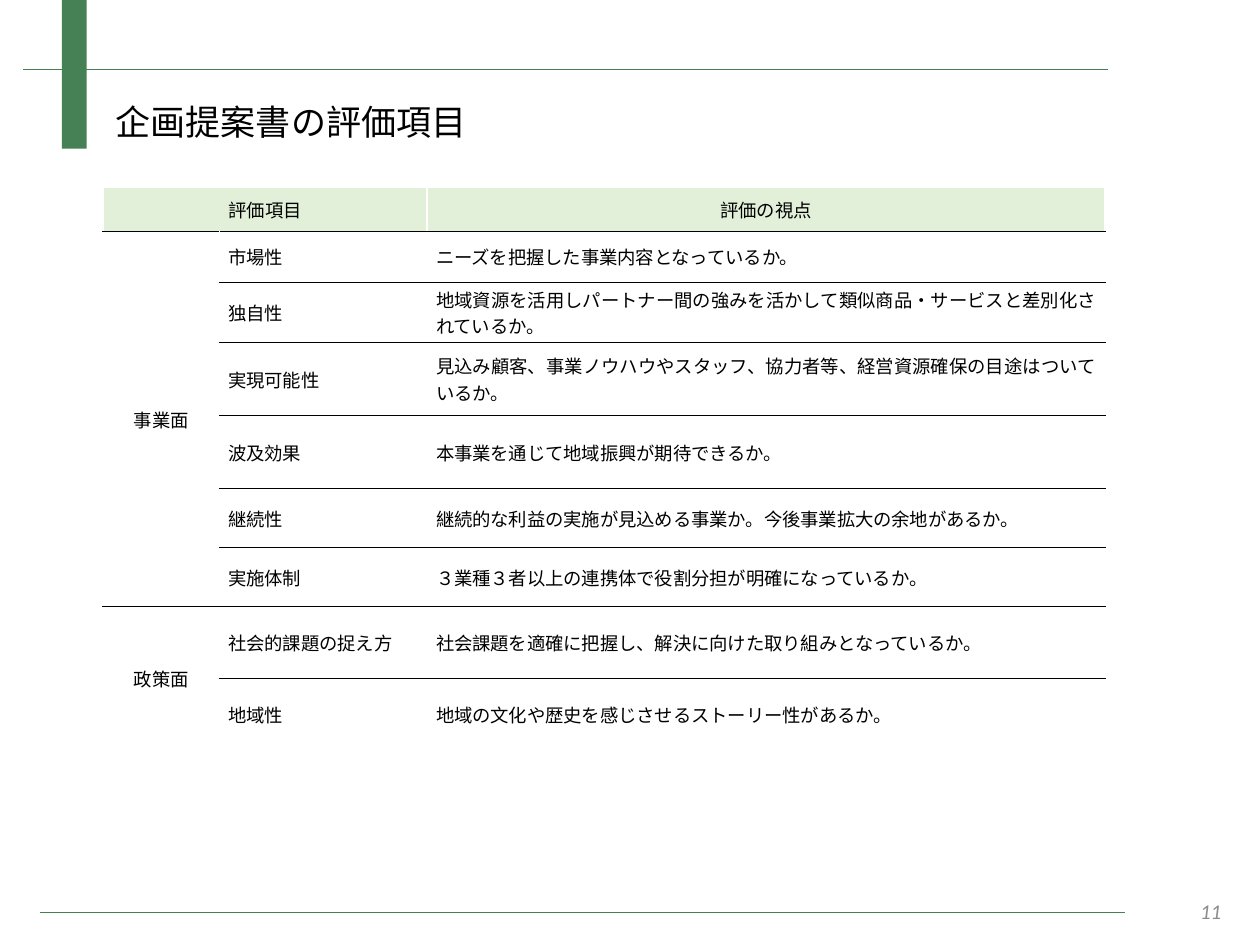
from lxml.etree import SubElement
from pptx import Presentation
from pptx.dml.color import RGBColor
from pptx.enum.shapes import MSO_CONNECTOR, MSO_SHAPE
from pptx.enum.text import MSO_ANCHOR, PP_ALIGN
from pptx.oxml import parse_xml
from pptx.oxml.ns import nsdecls, qn
from pptx.util import Cm, Pt

GREEN, BLACK, WHITE = "458154", "000000", "FFFFFF"


def write(frame, text, size, align, font="Arial", color=BLACK):
    """Put one styled run in the first paragraph and return the run."""
    para = frame.paragraphs[0]
    para.alignment = align
    run = para.add_run()
    run.text = text
    run.font.size = Pt(size)
    run.font.name = font
    run.font.color.rgb = RGBColor.from_string(color)
    return run


def set_edges(cell, top, bottom):
    """Draw white sides, and a top and bottom edge in the given colours."""
    edges = [("L", WHITE), ("R", WHITE), ("T", top), ("B", bottom)]
    for i, (side, color) in enumerate(edges):
        width = Pt(0.5 if color == BLACK else 1)
        cell._tc.get_or_add_tcPr().insert(i, parse_xml(
            f'<a:ln{side} {nsdecls("a")} w="{width}"><a:solidFill>'
            f'<a:srgbClr val="{color}"/></a:solidFill></a:ln{side}>'))


deck = Presentation()
deck.slide_width, deck.slide_height = Cm(25.4), Cm(19.05)
slide = deck.slides.add_slide(deck.slide_layouts[5])
shapes = slide.shapes

# Green bar and the two rules
bar = shapes.add_shape(MSO_SHAPE.RECTANGLE, Cm(1.25), Cm(0), Cm(0.5), Cm(3))
bar.shadow.inherit = False
bar.fill.solid()
bar.fill.fore_color.rgb = RGBColor.from_string(GREEN)
bar.line.fill.background()
for left, top in [(0.46, 1.4), (0.81, 18.39)]:
    rule = shapes.add_connector(MSO_CONNECTOR.STRAIGHT, Cm(left), Cm(top),
                                Cm(left + 21.87), Cm(top))
    rule.line.color.rgb = RGBColor.from_string(GREEN)
    rule.line.width = Pt(0.75)
    SubElement(rule._element.spPr, qn("a:effectLst"))

# Title
title = shapes.title
title.left, title.top = Cm(2.08), Cm(1.9)
title.width, title.height = Cm(12.24), Cm(1.12)
title.text_frame.vertical_anchor = MSO_ANCHOR.TOP
write(title.text_frame, "企画提案書の評価項目", 20, PP_ALIGN.LEFT)

# Page number
page = shapes.add_textbox(Cm(19.15), Cm(17.86), Cm(5.72), Cm(1.02)).text_frame
page.word_wrap = True
page.vertical_anchor = MSO_ANCHOR.MIDDLE
write(page, "11", 12, PP_ALIGN.RIGHT, "Calibri", "8C8C8C").font.italic = True

# Evaluation table
rows = [
    ("評価項目", "", "評価の視点"),
    ("事業面", "市場性", "ニーズを把握した事業内容となっているか。"),
    ("", "独自性", "地域資源を活用しパートナー間の強みを活かして"
     "類似商品・サービスと差別化されているか。"),
    ("", "実現可能性", "見込み顧客、事業ノウハウやスタッフ、協力者等、"
     "経営資源確保の目途はついているか。"),
    ("", "波及効果", "本事業を通じて地域振興が期待できるか。"),
    ("", "継続性", "継続的な利益の実施が見込める事業か。"
     "今後事業拡大の余地があるか。"),
    ("", "実施体制", "３業種３者以上の連携体で役割分担が明確になっているか。"),
    ("政策面", "社会的課題の捉え方",
     "社会課題を適確に把握し、解決に向けた取り組みとなっているか。"),
    ("", "地域性", "地域の文化や歴史を感じさせるストーリー性があるか。"),
]
widths = [2.34, 4.19, 13.67]
heights = [0.89, 1.02, 1.22, 1.47, 1.47, 1.19, 1.19, 1.45, 1.45]
table = shapes.add_table(len(rows), len(widths), Cm(2.08), Cm(3.78),
                         Cm(sum(widths)), Cm(sum(heights))).table
table.first_row = table.horz_banding = False
for col, width in zip(table.columns, widths):
    col.width = Cm(width)
for row, height in zip(table.rows, heights):
    row.height = Cm(height)

for r, texts in enumerate(rows):
    for c, text in enumerate(texts):
        cell = table.cell(r, c)
        cell.vertical_anchor = MSO_ANCHOR.MIDDLE
        cell.margin_left = cell.margin_right = Cm(0.18)
        cell.margin_top = cell.margin_bottom = Cm(0)
        if r == 0:
            cell.fill.solid()
            cell.fill.fore_color.rgb = RGBColor.from_string("E2F0D9")
        else:
            cell.fill.background()
        last = r == len(rows) - 1 or text == "政策面"
        set_edges(cell, BLACK if r else WHITE, WHITE if last else BLACK)
        if text:
            middle = r == 0 or c == 0
            write(cell.text_frame, text, 10.5,
                  PP_ALIGN.CENTER if middle else PP_ALIGN.JUSTIFY)

for start, end in [((0, 0), (0, 1)), ((1, 0), (6, 0)), ((7, 0), (8, 0))]:
    table.cell(*start).merge(table.cell(*end))

deck.save("out.pptx")
